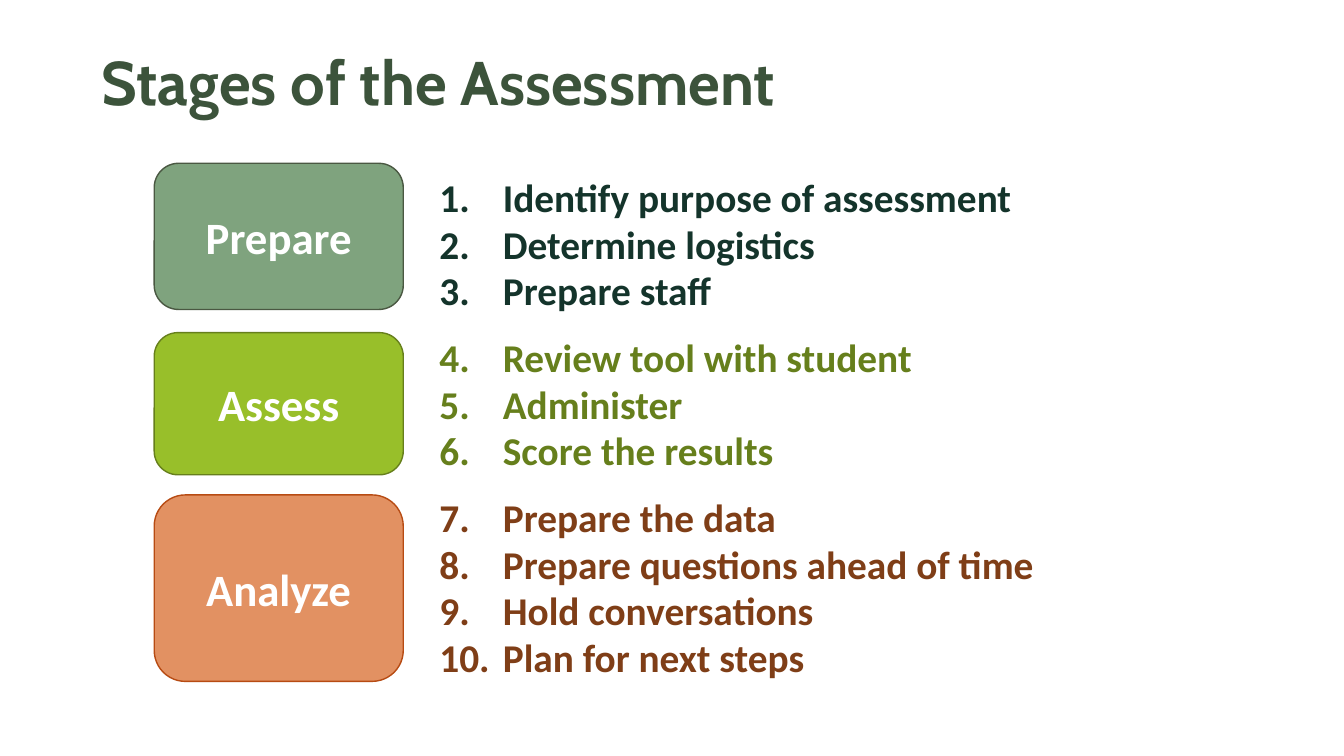
from dataclasses import dataclass

from pptx import Presentation, util as u
from pptx.dml.color import RGBColor
from pptx.enum import shapes, text
from pptx.oxml.ns import qn


@dataclass(frozen=True)
class Theme:
    heading_font: str = "Cabin"
    body_font: str = "Calibri"
    heading_color: str = "3C533B"
    label_color: str = "FFFFFF"
    heading_size: float = 44
    label_size: float = 32
    step_size: float = 28.1
    step_gap: float = 9.7
    stage_gap: float = 24


THEME = Theme()
WIDTH, HEIGHT = 13.33, 7.5
HEADING_BOX = (0.91, 0.12, 11.5, 1.45)
STEPS_BOX = (4.26, 1.8, 7.06, 5.3)
STAGE_LEFT, STAGE_WIDTH = 1.53, 2.47
STEP_INDENT = 0.63

STAGES = [
    ("Prepare", 1.62, 1.45, "7FA37E", "4A5842", "14342B",
     ["Identify purpose of assessment", "Determine logistics", "Prepare staff"]),
    ("Assess", 3.3, 1.41, "98BF2A", "667F1C", "667F1C",
     ["Review tool with student", "Administer", "Score the results"]),
    ("Analyze", 4.91, 1.85, "E29162", "B74B13", "7F3E17",
     ["Prepare the data", "Prepare questions ahead of time",
      "Hold conversations", "Plan for next steps"]),
]


def rgb(value):
    return RGBColor.from_string(value)


def inches(box):
    return [u.Inches(length) for length in box]


def style(paragraph, font_name, size, color):
    font = paragraph.font
    font.name, font.size, font.bold = font_name, u.Pt(size), True
    font.color.rgb = rgb(color)


def number(paragraph):
    properties = paragraph._p.get_or_add_pPr()
    indent = u.Inches(STEP_INDENT)
    properties.set("marL", str(indent))
    properties.set("indent", str(-indent))
    bullet = properties.makeelement(qn("a:buAutoNum"), {"type": "arabicPeriod"})
    properties.append(bullet)


def add_heading(slide, box):
    frame = slide.shapes.add_textbox(*inches(box)).text_frame
    frame.word_wrap = True
    frame.vertical_anchor = text.MSO_ANCHOR.MIDDLE
    heading = frame.paragraphs[0]
    heading.text = "Stages of the Assessment"
    heading.line_spacing = 0.9
    style(heading, THEME.heading_font, THEME.heading_size, THEME.heading_color)


def add_stage(slide, box, name, fill, outline):
    stage = slide.shapes.add_shape(
        shapes.MSO_SHAPE.ROUNDED_RECTANGLE, *inches(box))
    stage.shadow.inherit = False
    stage.fill.solid()
    stage.fill.fore_color.rgb = rgb(fill)
    stage.line.color.rgb = rgb(outline)
    stage.line.width = u.Pt(1)
    stage.text_frame.vertical_anchor = text.MSO_ANCHOR.MIDDLE
    label = stage.text_frame.paragraphs[0]
    label.text = name
    label.alignment = text.PP_ALIGN.CENTER
    style(label, THEME.body_font, THEME.label_size, THEME.label_color)


def add_steps(slide, box, groups):
    frame = slide.shapes.add_textbox(*inches(box)).text_frame
    frame.word_wrap = True
    for group, (color, steps) in enumerate(groups):
        for position, wording in enumerate(steps):
            first = group == position == 0
            step = frame.paragraphs[0] if first else frame.add_paragraph()
            step.text = wording
            number(step)
            step.line_spacing = 0.7
            gap = THEME.step_gap if position else THEME.stage_gap
            step.space_before = u.Pt(0 if first else gap)
            style(step, THEME.body_font, THEME.step_size, color)


def main():
    deck = Presentation()
    deck.slide_width, deck.slide_height = inches((WIDTH, HEIGHT))
    slide = deck.slides.add_slide(deck.slide_layouts[6])
    add_heading(slide, HEADING_BOX)
    add_steps(slide, STEPS_BOX, [(stage[5], stage[6]) for stage in STAGES])
    for name, top, height, fill, outline, _, _ in STAGES:
        add_stage(slide, (STAGE_LEFT, top, STAGE_WIDTH, height),
                  name, fill, outline)
    deck.save("out.pptx")


if __name__ == "__main__":
    main()
